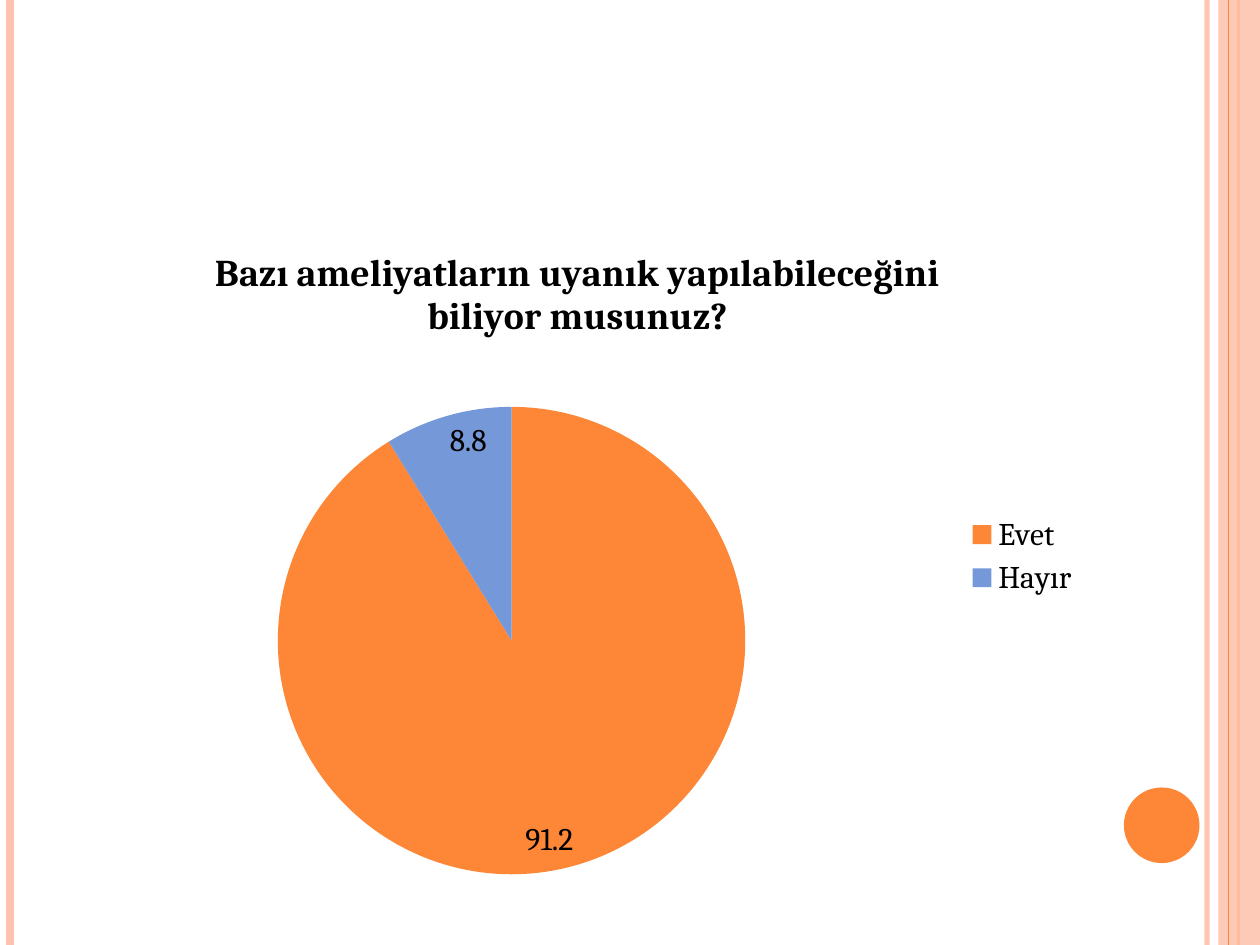
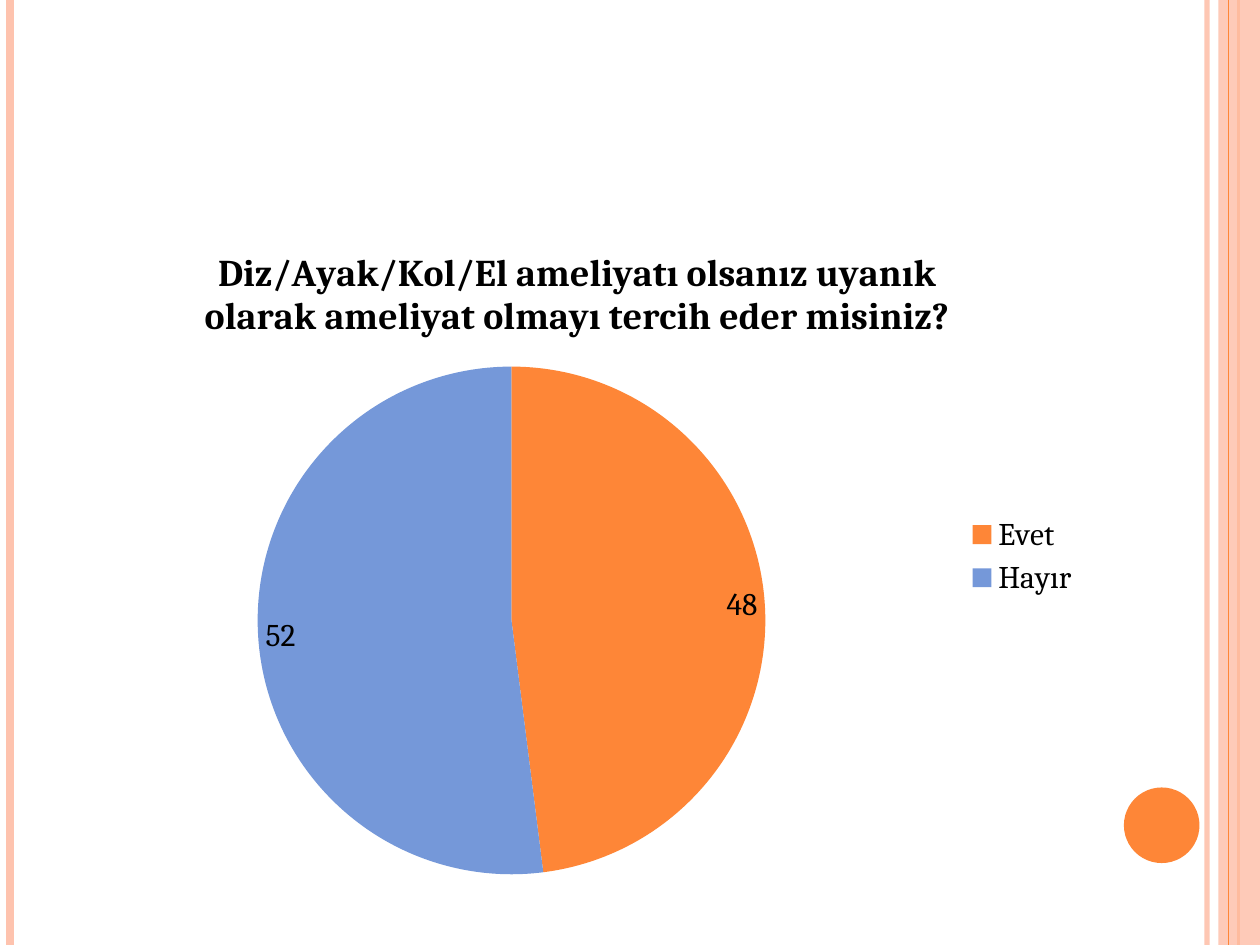
"""Build two survey slides, each with a pie chart of yes and no answers."""
from pptx import Presentation
from pptx import util as u
from pptx.chart import data as chart_data
from pptx.dml import color
from pptx.enum import chart as charts, shapes
from pptx.oxml import parse_xml
from pptx.oxml.ns import nsdecls, qn

PEACH, ORANGE, BLUE, BLACK = "FEC3AE", "FE8637", "7598D9", "000000"
FONT = "Cambria"
ANSWERS = {"Evet": ORANGE, "Hayır": BLUE}
WIDTH, HEIGHT = 10, 7.5
CHART_LEFT, CHART_TOP, CHART_WIDTH, CHART_HEIGHT = 0.5, 1.75, 8.17, 5.33
PIE_CENTER, PIE_BOTTOM = 4.06, 6.94

BACK_LINES = [(9.58, PEACH, 3, 93), (0.08, PEACH, 4.5, 100), (9.83, ORANGE, 1.5, 100)]
FRONT_LINES = [(9.75, ORANGE, 0.75, 100)]
BAND = (shapes.MSO_SHAPE.RECTANGLE, 9.67, 0, 0.33, HEIGHT, PEACH, 87)
DOT = (shapes.MSO_SHAPE.OVAL, 8.92, 6.25, 0.6, 0.6, ORANGE, 100)

SURVEYS = [
    ("Bazı ameliyatların uyanık yapılabileceğini biliyor musunuz?", (91.2, 8.8), 3.71),
    ("Diz/Ayak/Kol/El ameliyatı olsanız uyanık olarak ameliyat olmayı tercih eder misiniz?",
     (48, 52), 4.03),
]


def paint(fill, hex_color, opacity=100):
    fill.solid()
    fill.fore_color.rgb = color.RGBColor.from_string(hex_color)
    if opacity < 100:
        tint = fill._xPr.find(qn("a:solidFill"))[0]
        tint.append(parse_xml(f'<a:alpha {nsdecls("a")} val="{opacity * 1000}"/>'))


def style(font, **formats):
    for name, value in {"name": FONT, "size": u.Pt(18), "bold": False, **formats}.items():
        setattr(font, name, value)
    paint(font.fill, BLACK)


deck = Presentation()
deck.slide_width, deck.slide_height = u.Inches(WIDTH), u.Inches(HEIGHT)

for question, shares, diameter in SURVEYS:
    page = deck.slides.add_slide(deck.slide_layouts[6])
    paint(page.background.fill, "FFFFFF")

    for lines, (kind, left, top, width, height, hue, opacity) in (
            (BACK_LINES, BAND), (FRONT_LINES, DOT)):
        for x, line_hue, weight, line_opacity in lines:
            stripe = page.shapes.add_connector(
                shapes.MSO_CONNECTOR.STRAIGHT,
                u.Inches(x), u.Inches(0), u.Inches(x), u.Inches(HEIGHT))
            stripe.line.width = u.Pt(weight)
            paint(stripe.line.fill, line_hue, line_opacity)
            stripe._element.spPr.append(parse_xml(f'<a:effectLst {nsdecls("a")}/>'))
        ornament = page.shapes.add_shape(
            kind, u.Inches(left), u.Inches(top), u.Inches(width), u.Inches(height))
        ornament.shadow.inherit = False
        ornament.line.fill.background()
        paint(ornament.fill, hue, opacity)

    answers = chart_data.CategoryChartData()
    answers.categories = list(ANSWERS)
    answers.add_series(question, shares)
    chart = page.shapes.add_chart(
        charts.XL_CHART_TYPE.PIE, u.Inches(CHART_LEFT), u.Inches(CHART_TOP),
        u.Inches(CHART_WIDTH), u.Inches(CHART_HEIGHT), answers).chart
    style(chart.font)

    chart.has_title = True
    title = chart.chart_title.text_frame
    title.text = question
    style(title.paragraphs[0].runs[0].font, size=u.Pt(21.6), bold=True)
    chart.chart_title.include_in_layout = False

    chart.has_legend = True
    chart.legend.position = charts.XL_LEGEND_POSITION.RIGHT
    chart.legend.include_in_layout = False
    style(chart.legend.font)

    pie = chart.plots[0]
    pie.vary_by_categories = True
    pie.has_data_labels = True
    labels = pie.data_labels
    for name, value in {"show_value": True, "show_percentage": False,
                        "number_format": "General", "number_format_is_linked": False,
                        "position": charts.XL_LABEL_POSITION.INSIDE_END}.items():
        setattr(labels, name, value)
    style(labels.font)
    for index, hue in enumerate(ANSWERS.values()):
        paint(pie.series[0].points[index].format.fill, hue)

    area = pie._element.getparent()
    for layout in area.findall(qn("c:layout")):
        area.remove(layout)
    place = {
        "x": (PIE_CENTER - diameter / 2 - CHART_LEFT) / CHART_WIDTH,
        "y": (PIE_BOTTOM - diameter - CHART_TOP) / CHART_HEIGHT,
        "w": diameter / CHART_WIDTH,
        "h": diameter / CHART_HEIGHT,
    }
    sizes = "".join(f'<c:{key} val="{value:.4f}"/>' for key, value in place.items())
    area.insert(0, parse_xml(
        f'<c:layout {nsdecls("c")}><c:manualLayout><c:layoutTarget val="inner"/>'
        f'<c:xMode val="edge"/><c:yMode val="edge"/>{sizes}</c:manualLayout></c:layout>'))

deck.save("out.pptx")
